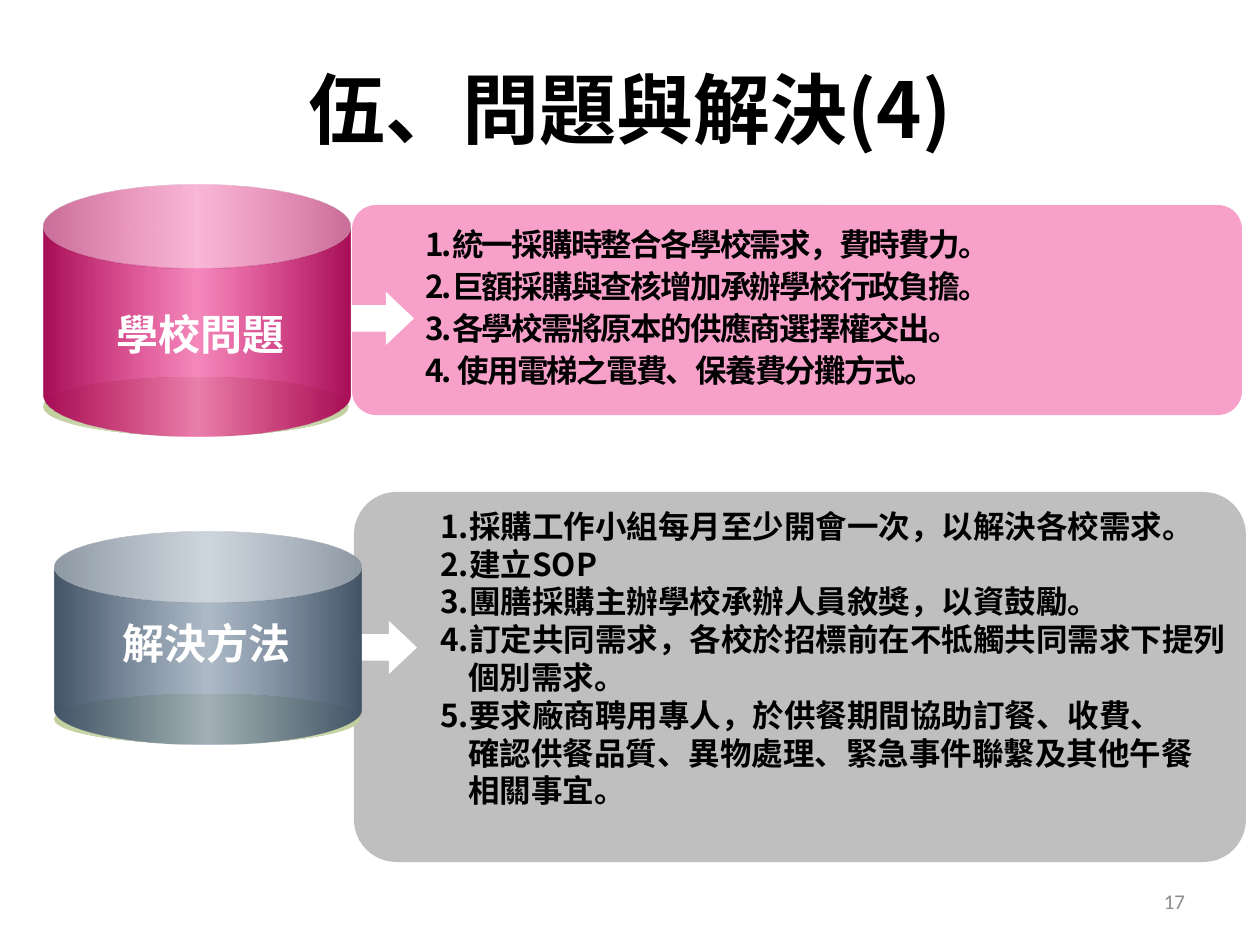
from lxml.etree import SubElement
from pptx import Presentation
from pptx.dml.color import RGBColor
from pptx.enum.shapes import MSO_SHAPE
from pptx.enum.text import MSO_ANCHOR, PP_ALIGN
from pptx.oxml.ns import qn
from pptx.util import Emu, Pt

PX = 914400 / 126
BLACK = RGBColor(0x00, 0x00, 0x00)
WHITE = RGBColor(0xFF, 0xFF, 0xFF)
GRAY = RGBColor(0x8C, 0x8C, 0x8C)
PINK = RGBColor(0xF7, 0xA1, 0xCA)
SILVER = RGBColor(0xBF, 0xBF, 0xBF)
MAGENTA = RGBColor(0xEA, 0x15, 0x7A)
DARK_MAGENTA = RGBColor(0xA7, 0x0F, 0x57)
SLATE = RGBColor(0x5F, 0x77, 0x91)
DARK_SLATE = RGBColor(0x44, 0x55, 0x68)
OLIVE = RGBColor(0xC1, 0xCF, 0x9D)
PALE_OLIVE = RGBColor(0xE7, 0xEC, 0xDC)
CJK = "Noto Sans CJK SC"
LATIN = "Calibri"

PROBLEMS = [
    "1.統一採購時整合各學校需求，費時費力。",
    "2.巨額採購與查核增加承辦學校行政負擔。",
    "3.各學校需將原本的供應商選擇權交出。",
    "4. 使用電梯之電費、保養費分攤方式。",
]
SOLUTIONS = [
    ("1.採購工作小組每月至少開會一次，以解決各校需求。", 0),
    ("2.建立SOP", 0),
    ("3.團膳採購主辦學校承辦人員敘獎，以資鼓勵。", 0),
    ("4.訂定共同需求，各校於招標前在不牴觸共同需求下提列", 0),
    ("個別需求。", 28),
    ("5.要求廠商聘用專人，於供餐期間協助訂餐、收費、", 0),
    ("確認供餐品質、異物處理、緊急事件聯繫及其他午餐", 28),
    ("相關事宜。", 28),
]


def px(length):
    """Turn whole pixels into EMU."""
    return Emu(round(length * PX))


def add_shape(page, kind, place, adjustments=()):
    """Add a preset shape without line or shadow."""
    shape = page.shapes.add_shape(kind, *map(px, place))
    shape.shadow.inherit = False
    shape.line.fill.background()
    for index, value in enumerate(adjustments):
        shape.adjustments[index] = value
    return shape


def fill_solid(shape, color):
    """Fill a shape with one colour."""
    shape.fill.solid()
    shape.fill.fore_color.rgb = color


def fill_mirrored(shape, edge, middle, opacity=100):
    """Fill a shape with a left-to-right gradient that mirrors at its middle."""
    shape.fill.gradient()
    shape.fill.gradient_angle = 0
    stops = shape.element.spPr.find(".//" + qn("a:gsLst"))
    for stop in list(stops):
        stops.remove(stop)
    for position, color, alpha in ((0, edge, 100), (50, middle, opacity), (100, edge, 100)):
        stop = SubElement(stops, qn("a:gs"), pos=str(position * 1000))
        paint = SubElement(stop, qn("a:srgbClr"), val=str(color))
        if alpha < 100:
            SubElement(paint, qn("a:alpha"), val=str(alpha * 1000))


def set_frame(frame, insets, anchor):
    """Set wrapping, insets and anchor of a text frame."""
    frame.word_wrap = True
    frame.vertical_anchor = anchor
    frame.margin_left, frame.margin_top, frame.margin_right, frame.margin_bottom = map(px, insets)


def add_span(para, text, size, color, font=CJK, bold=True, tracking=0):
    """Add a run with its font, size, colour and letter spacing."""
    span = para.add_run()
    span.text = text
    span.font.size = Pt(size)
    span.font.bold = bold
    span.font.color.rgb = color
    span.font.name = font
    properties = span.font._element
    SubElement(properties, qn("a:ea"), typeface=font)
    if tracking:
        properties.set("spc", str(tracking * 100))
    return span


def add_shadow(span):
    """Give a run a dark drop shadow."""
    properties = span.font._element
    effects = properties.makeelement(qn("a:effectLst"), {})
    properties.find(qn("a:solidFill")).addnext(effects)
    shadow = SubElement(effects, qn("a:outerShdw"), dist="38100", dir="2700000")
    SubElement(shadow, qn("a:srgbClr"), val="000000")


def add_text(page, place, text, size, color, align=PP_ALIGN.CENTER, **style):
    """Add a one-line text box and return its run."""
    box = page.shapes.add_textbox(*map(px, place))
    set_frame(box.text_frame, (12, 6, 12, 6), MSO_ANCHOR.MIDDLE)
    para = box.text_frame.paragraphs[0]
    para.alignment = align
    return add_span(para, text, size, color, **style)


def add_panel(page, place, color, lines, insets, pitch, gap, tracking):
    """Add a rounded panel with indented lines of text."""
    panel = add_shape(page, MSO_SHAPE.ROUNDED_RECTANGLE, place, [0.115])
    fill_solid(panel, color)
    frame = panel.text_frame
    set_frame(frame, insets, MSO_ANCHOR.MIDDLE)
    for index, (text, indent) in enumerate(lines):
        para = frame.add_paragraph() if index else frame.paragraphs[0]
        para.alignment = PP_ALIGN.LEFT
        para.line_spacing = Pt(pitch)
        para.space_before = para.space_after = Pt(gap)
        para._p.get_or_add_pPr().set("marL", str(px(indent)))
        add_span(para, text, 18, BLACK, tracking=tracking)


def add_arrow(page, left, top):
    """Add a white arrow that leads into a panel."""
    arrow = add_shape(page, MSO_SHAPE.RIGHT_ARROW, (left, top, 64, 53), [0.5, 0.528])
    fill_solid(arrow, WHITE)


def add_drum(page, place, base_height, edge, middle):
    """Add a cylinder standing on an olive base."""
    left, top, width, height = place
    base_top = top + height - base_height - 1
    base = add_shape(page, MSO_SHAPE.OVAL, (left - 1, base_top, width, base_height))
    fill_mirrored(base, OLIVE, PALE_OLIVE)
    drum = add_shape(page, MSO_SHAPE.CAN, place, [0.332])
    fill_mirrored(drum, edge, middle, 50)


def main():
    """Build the slide and save it."""
    deck = Presentation()
    deck.slide_width, deck.slide_height = px(1260), px(945)
    page = deck.slides.add_slide(deck.slide_layouts[6])
    add_text(page, (0, 29, 1260, 158), "伍、問題與解決(4)", 44, BLACK)
    add_text(page, (903, 876, 294, 50), "17", 12, GRAY, PP_ALIGN.RIGHT, font=LATIN, bold=False)
    add_panel(page, (352, 205, 890, 210), PINK, [(text, 0) for text in PROBLEMS],
              (66, 0, 0, 0), 18, 3, -1)
    add_panel(page, (354, 492, 892, 370), SILVER, SOLUTIONS, (74, 0, 0, 38), 21.6, 0, 0)
    add_arrow(page, 350, 292)
    add_arrow(page, 353, 621)
    add_drum(page, (55, 532, 306, 213), 50, DARK_SLATE, SLATE)
    add_drum(page, (44, 185, 306, 252), 59, DARK_MAGENTA, MAGENTA)
    for left, top, text in ((58, 302, "學校問題"), (64, 611, "解決方法")):
        add_shadow(add_text(page, (left, top, 285, 63), text, 24, WHITE))
    deck.save("out.pptx")


if __name__ == "__main__":
    main()
